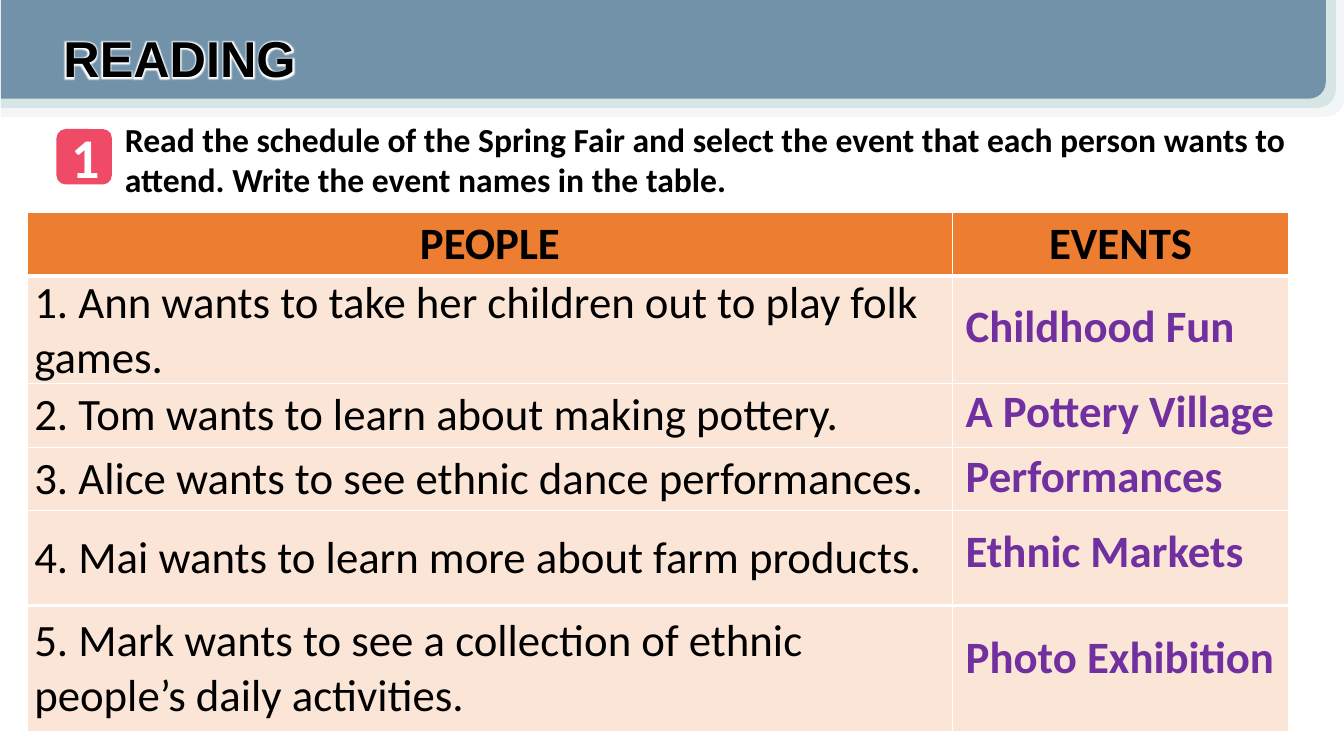
"""Build the reading exercise slide with a table of people and events."""
from lxml.etree import SubElement
from pptx import Presentation
from pptx.dml.color import RGBColor
from pptx.enum.shapes import MSO_SHAPE
from pptx.enum.text import MSO_ANCHOR, MSO_AUTO_SIZE, PP_ALIGN
from pptx.oxml import parse_xml
from pptx.oxml.ns import nsdecls, qn
from pptx.util import Inches, Pt

COLORS = {
    "black": "000000", "white": "FFFFFF", "purple": "7030A0",
    "band_outer": "F3F6F6", "band_middle": "D8E5E5", "band_inner": "7192A9",
    "badge": "EF4B66", "header": "ED7D31", "body": "FBE5D6",
}


def add_span(para, text, size, color="black", bold=True, font="Calibri"):
    span = para.add_run()
    span.text = text
    span.font.size = Pt(size)
    span.font.name = font
    span.font.bold = bold
    span.font.color.rgb = RGBColor.from_string(COLORS[color])
    return span


def add_text(place, text, size, color="black", font="Calibri", align=None):
    box = page.shapes.add_textbox(*map(Inches, place))
    box.text_frame.word_wrap = True
    box.text_frame.auto_size = MSO_AUTO_SIZE.SHAPE_TO_FIT_TEXT
    para = box.text_frame.paragraphs[0]
    para.alignment = align
    return add_span(para, text, size, color, font=font)


deck = Presentation()
deck.slide_width, deck.slide_height = Inches(13.33), Inches(7.5)
page = deck.slides.add_slide(deck.slide_layouts[6])

banner = page.shapes.add_group_shape()
shapes = [
    (banner.shapes, MSO_SHAPE.ROUND_1_RECTANGLE, (0.01, -0.02, 13.33, 1.18), "band_outer"),
    (banner.shapes, MSO_SHAPE.ROUND_1_RECTANGLE, (0.01, -0.02, 13.24, 1.09), "band_middle"),
    (banner.shapes, MSO_SHAPE.ROUND_1_RECTANGLE, (0.01, -0.02, 13.14, 1), "band_inner"),
    (page.shapes, MSO_SHAPE.ROUNDED_RECTANGLE, (0.56, 1.28, 0.55, 0.55), "badge"),
]
for owner, kind, place, color in shapes:
    shape = owner.add_shape(kind, *map(Inches, place))
    shape.shadow.inherit = False
    shape.fill.solid()
    shape.fill.fore_color.rgb = RGBColor.from_string(COLORS[color])
    shape.line.fill.background()
    if kind == MSO_SHAPE.ROUND_1_RECTANGLE:
        shape._element.spPr.find(qn("a:xfrm")).set("flipV", "1")

add_text((1.14, 1.13, 11.77, 0.91),
         "Read the schedule of the Spring Fair and select the event that each person "
         "wants to attend. Write the event names in the table.", 24)
title = add_text((0.53, 0.22, 6.71, 0.71), "READING", 36, font="Arial")
glow = parse_xml(
    f'<a:effectLst {nsdecls("a")}><a:glow rad="63500">'
    f'<a:srgbClr val="{COLORS["white"]}"/></a:glow></a:effectLst>')
title.font._element.find(qn("a:solidFill")).addnext(glow)
add_text((0.61, 1.17, 0.43, 0.77), "1", 40, "white", align=PP_ALIGN.CENTER)

rows = [
    (0.63, "PEOPLE", "EVENTS"),
    (0.68, "1. Ann wants to take her children out to play folk games.", ""),
    (0.63, "2. Tom wants to learn about making pottery.", ""),
    (0.63, "3. Alice wants to see ethnic dance performances.", ""),
    (0.94, "4. Mai wants to learn more about farm products.", ""),
    (1.25, "5. Mark wants to see a collection of ethnic people’s daily activities.", ""),
]
table = page.shapes.add_table(len(rows), 2, Inches(0.27), Inches(2.11),
                              Inches(12.51), Inches(4.76)).table
for column, width in zip(table.columns, (9.18, 3.33)):
    column.width = Inches(width)
thick_edges = {(0, "B"), (1, "T"), (4, "B"), (5, "T")}
for row_index, (height, *texts) in enumerate(rows):
    table.rows[row_index].height = Inches(height)
    is_header = row_index == 0
    for column_index, text in enumerate(texts):
        cell = table.cell(row_index, column_index)
        cell.vertical_anchor = MSO_ANCHOR.MIDDLE
        cell.margin_left = cell.margin_right = Inches(0.07)
        cell.margin_top = cell.margin_bottom = 0
        properties = cell._tc.get_or_add_tcPr()
        for side in "LRTB":
            weight = 3 if (row_index, side) in thick_edges else 1
            edge = SubElement(properties, qn(f"a:ln{side}"), w=str(Pt(weight)))
            paint = SubElement(edge, qn("a:solidFill"))
            SubElement(paint, qn("a:srgbClr"), val=COLORS["white"])
        cell.fill.solid()
        cell.fill.fore_color.rgb = RGBColor.from_string(
            COLORS["header" if is_header else "body"])
        if text:
            para = cell.text_frame.paragraphs[0]
            para.alignment = PP_ALIGN.CENTER if is_header else PP_ALIGN.LEFT
            add_span(para, text, 32, bold=is_header)

answers = [
    (2.9, 3.09, "Childhood Fun"),
    (3.75, 3.67, "A Pottery Village"),
    (4.39, 3.09, "Performances"),
    (5.14, 3.09, "Ethnic Markets"),
    (6.19, 3.48, "Photo Exhibition"),
]
for top, width, event in answers:
    add_text((9.48, top, width, 0.64), event, 32, "purple")

deck.save("out.pptx")
